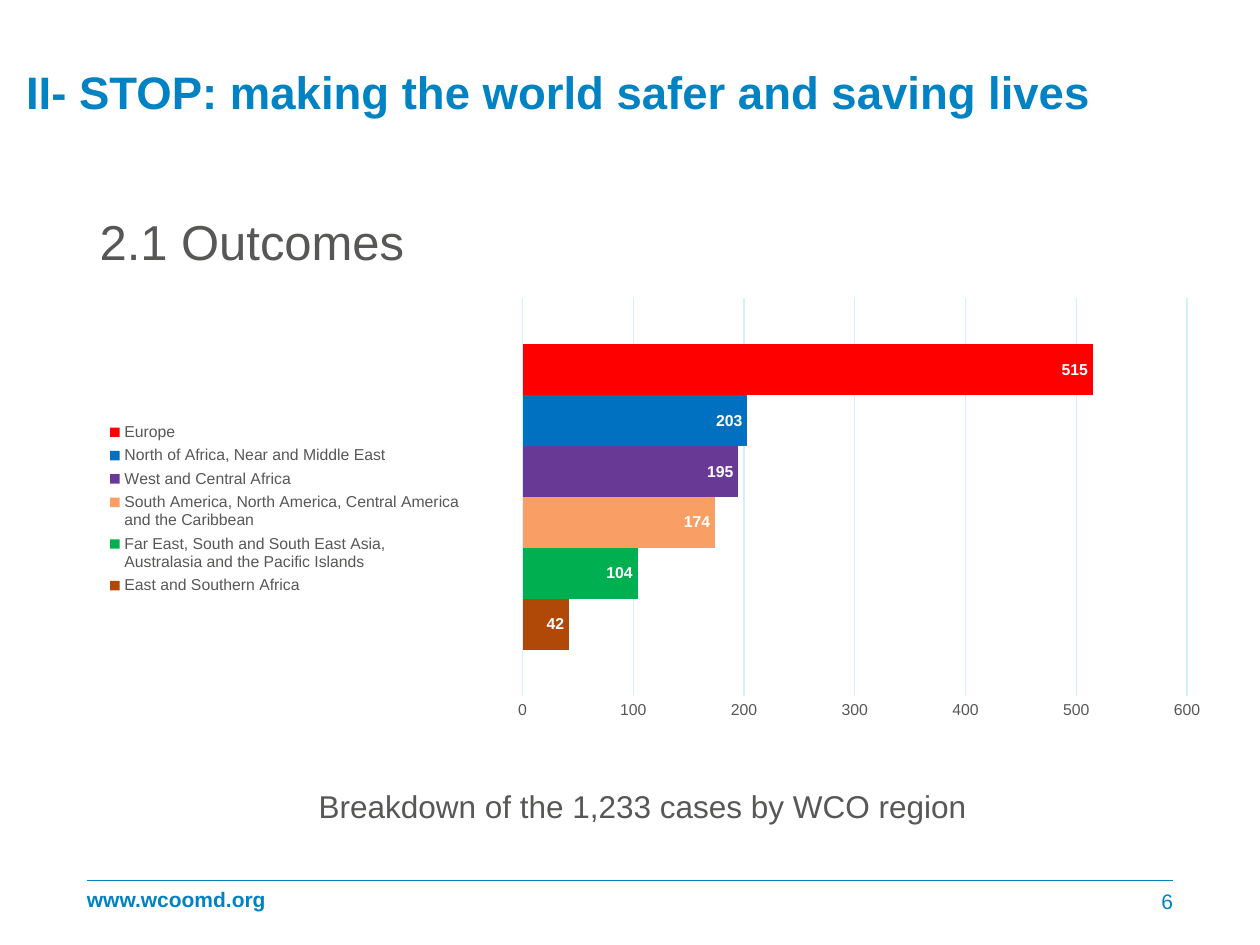
import pptx
import pptx.util
import pptx.chart.data
import pptx.dml.color
import pptx.enum.chart
import pptx.enum.shapes
import pptx.enum.text
from lxml import etree

Inches = pptx.util.Inches
Pt = pptx.util.Pt
RGBColor = pptx.dml.color.RGBColor
Align = pptx.enum.text.PP_ALIGN
Anchor = pptx.enum.text.MSO_ANCHOR

FONT = "Arial"
BLUE = RGBColor(0x00, 0x82, 0xC3)
GREY = RGBColor(0x57, 0x57, 0x56)
WHITE = RGBColor(0xFF, 0xFF, 0xFF)
GRID = RGBColor(0xD0, 0xEF, 0xFF)

# Region, cases, bar colour, from the bottom bar to the top
REGIONS = [
    ("East and Southern Africa", 42, RGBColor(0xB0, 0x49, 0x07)),
    ("Far East, South and South East Asia, Australasia and the Pacific Islands",
     104, RGBColor(0x00, 0xB0, 0x50)),
    ("South America, North America, Central America and the Caribbean",
     174, RGBColor(0xF9, 0x9F, 0x65)),
    ("West and Central Africa", 195, RGBColor(0x68, 0x3A, 0x96)),
    ("North of Africa, Near and Middle East", 203, RGBColor(0x00, 0x70, 0xC0)),
    ("Europe", 515, RGBColor(0xFF, 0x00, 0x00)),
]


def style_font(font, size, color, bold=False):
    font.name = FONT
    font.size = Pt(size)
    font.bold = bold
    font.color.rgb = color


def place(shape, box):
    shape.left, shape.top, shape.width, shape.height = (Inches(v) for v in box)


def write(shape, text, size, color, bold=False, align=Align.LEFT,
          anchor=Anchor.TOP, spacing=1.0):
    frame = shape.text_frame
    frame.word_wrap = True
    frame.auto_size = pptx.enum.text.MSO_AUTO_SIZE.NONE
    frame.vertical_anchor = anchor
    paragraph = frame.paragraphs[0]
    paragraph.alignment = align
    paragraph.line_spacing = spacing
    paragraph.space_before = Pt(0)
    run = paragraph.add_run()
    run.text = text
    style_font(run.font, size, color, bold)
    return paragraph


def add_text(slide, box, *args, **kwargs):
    shape = slide.shapes.add_textbox(*(Inches(v) for v in box))
    write(shape, *args, **kwargs)
    return shape


def add_title(slide, box):
    title = slide.shapes.title
    place(title, box)
    write(title, "II- STOP: making the world safer and saving lives", 26, BLUE,
          bold=True, align=Align.CENTER, spacing=0.9)


def add_heading(slide, box):
    body = slide.placeholders[1]
    place(body, box)
    paragraph = write(body, "2.1 Outcomes", 28, GREY, spacing=0.9)
    properties = paragraph._p.get_or_add_pPr()
    properties.set("marL", "0")
    properties.set("indent", "0")
    etree.SubElement(properties, pptx.oxml.ns.qn("a:buNone"))


def set_plot_layout(chart, x, y, width, height):
    plot_area = chart._chartSpace.chart.plotArea
    for old in plot_area.findall(pptx.oxml.ns.qn("c:layout")):
        plot_area.remove(old)
    layout = etree.Element(pptx.oxml.ns.qn("c:layout"))
    manual = etree.SubElement(layout, pptx.oxml.ns.qn("c:manualLayout"))
    settings = [("layoutTarget", "inner"), ("xMode", "edge"), ("yMode", "edge"),
                ("x", x), ("y", y), ("w", width), ("h", height)]
    for tag, value in settings:
        etree.SubElement(manual, pptx.oxml.ns.qn("c:" + tag)).set("val", str(value))
    plot_area.insert(0, layout)


def add_region_chart(slide, box):
    data = pptx.chart.data.CategoryChartData()
    data.categories = ["1"]
    for region, cases, _ in REGIONS:
        data.add_series(region, [cases])
    chart = slide.shapes.add_chart(
        pptx.enum.chart.XL_CHART_TYPE.BAR_CLUSTERED,
        *(Inches(v) for v in box), data).chart
    chart.has_title = False
    style_font(chart.font, 10, BLUE)
    set_plot_layout(chart, 0.38, 0.05, 0.59, 0.85)

    # Bars and their values
    plot = chart.plots[0]
    plot.gap_width = 182
    plot.overlap = 0
    plot.vary_by_categories = False
    for series, (_, _, color) in zip(plot.series, REGIONS):
        series.format.fill.solid()
        series.format.fill.fore_color.rgb = color
        labels = series.data_labels
        labels.show_value = True
        labels.position = pptx.enum.chart.XL_LABEL_POSITION.INSIDE_END
        style_font(labels.font, 9, WHITE, bold=True)

    # Axes
    chart.category_axis.visible = False
    axis = chart.value_axis
    axis.minimum_scale, axis.maximum_scale, axis.major_unit = 0, 600, 100
    axis.major_tick_mark = pptx.enum.chart.XL_TICK_MARK.NONE
    axis.format.line.fill.background()
    style_font(axis.tick_labels.font, 9, GREY)
    grid_line = axis.major_gridlines.format.line
    grid_line.color.rgb = GRID
    grid_line.width = Pt(0.75)

    # Legend
    chart.has_legend = True
    chart.legend.position = pptx.enum.chart.XL_LEGEND_POSITION.LEFT
    chart.legend.include_in_layout = False
    style_font(chart.legend.font, 9, GREY)


def add_caption(slide, box):
    add_text(slide, box, "Breakdown of the 1,233\u00a0cases by WCO region", 18, GREY,
             align=Align.CENTER)


def add_footer(slide, box):
    left, top, width, height = box
    right = left + width
    rule_y = top + 0.04

    # Rule
    rule = slide.shapes.add_connector(
        pptx.enum.shapes.MSO_CONNECTOR.STRAIGHT,
        Inches(left), Inches(rule_y), Inches(right), Inches(rule_y))
    rule.line.color.rgb = BLUE
    rule.line.width = Pt(0.5)
    etree.SubElement(rule._element.spPr, pptx.oxml.ns.qn("a:effectLst"))

    # Web address and page number
    address = add_text(slide, (left, top, 1.46, height), "www.wcoomd.org", 12, BLUE,
                       bold=True, anchor=Anchor.MIDDLE, spacing=0.9)
    address.text_frame.margin_left = address.text_frame.margin_right = 0
    number = add_text(slide, (right - 0.64, top, 0.64, height), "6", 12, BLUE,
                      align=Align.RIGHT, anchor=Anchor.MIDDLE)
    number.text_frame.margin_right = 0


def main():
    deck = pptx.Presentation()
    deck.slide_width, deck.slide_height = Inches(10), Inches(7.5)
    slide = deck.slides.add_slide(deck.slide_layouts[1])
    add_footer(slide, (0.69, 6.95, 8.62, 0.4))
    add_title(slide, (0.06, 0.51, 8.75, 0.88))
    add_heading(slide, (0.69, 1.68, 9.16, 4.76))
    add_region_chart(slide, (0.75, 2.18, 8.94, 3.72))
    add_caption(slide, (1.04, 6.2, 8.12, 0.4))
    deck.save("out.pptx")


if __name__ == "__main__":
    main()
